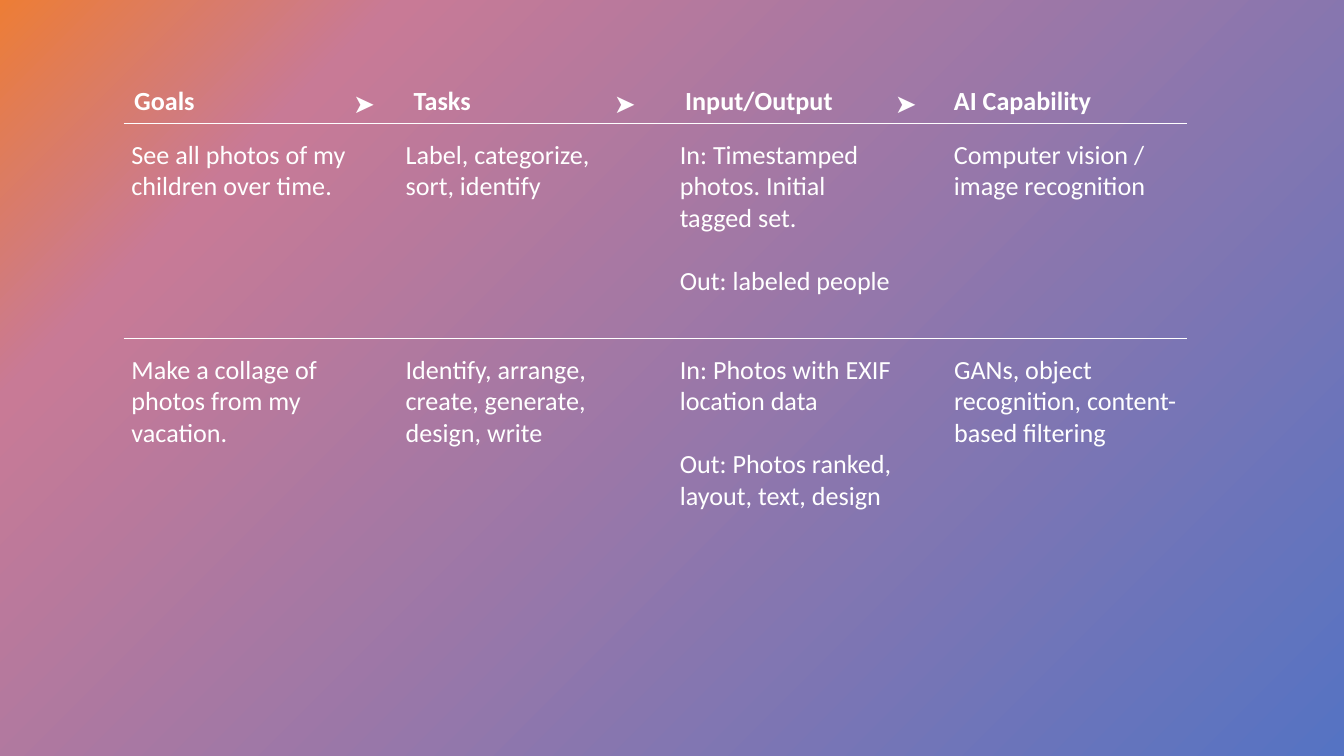
from pptx import Presentation
from pptx.dml.color import RGBColor
from pptx.enum.shapes import MSO_CONNECTOR
from pptx.enum.text import MSO_AUTO_SIZE as AutoSize
from pptx.oxml import parse_xml
from pptx.oxml.ns import nsdecls
from pptx.util import Inches, Pt
from lxml import etree

WHITE = RGBColor(0xFF, 0xFF, 0xFF)
BLUE = RGBColor(0x55, 0x73, 0xC3)
PINK = RGBColor(0xC8, 0x7A, 0x96)
ORANGE = RGBColor(0xED, 0x7D, 0x36)

COLUMN_X = [0.88, 2.92, 4.96, 7]
HEADINGS = [("Goals", 0.9, 0.66), ("Tasks", 2.98, 0.63),
            ("Input/Output", 5, 1.31), ("AI Capability", 7, 1.33)]
ARROW_X = [2.53, 4.47, 6.56]
# Each row: rule height, text top, short cell height, cells as paragraph lists
ROWS = [
    (0.92, 0.98, 0.57, [
        ["See all photos of my children over time."],
        ["Label, categorize, sort, identify"],
        ["In: Timestamped photos. Initial tagged set.", "Out: labeled people"],
        ["Computer vision / image recognition"]]),
    (2.52, 2.58, 0.81, [
        ["Make a collage of photos from my vacation."],
        ["Identify, arrange, create, generate, design, write"],
        ["In: Photos with EXIF location data",
         "Out: Photos ranked, layout, text, design"],
        ["GANs, object recognition, content-based filtering"]]),
]


def write_text(tf, paragraphs, size=14, bold=False, color=WHITE,
               font="Calibri", gap=17):
    """Fill a text frame, with gap points between paragraphs."""
    for i, text in enumerate(paragraphs):
        p = tf.add_paragraph() if i else tf.paragraphs[0]
        if i:
            p.space_before = Pt(gap)
        r = p.add_run()
        r.text = text
        r.font.name = font
        r.font.size = Pt(size)
        r.font.bold = bold
        r.font.color.rgb = color


class SlideBuilder:
    def __init__(self, slide, line_color=WHITE, line_width=0.5):
        self.s = slide
        self.line_color = line_color
        self.line_width = line_width

    def background(self, stops):
        """Radial gradient centred on the bottom right corner."""
        gs = "".join(f'<a:gs pos="{pos * 1000}"><a:srgbClr val="{color}"/></a:gs>'
                     for pos, color in stops)
        bg = parse_xml(
            f'<p:bg {nsdecls("p", "a")}><p:bgPr><a:gradFill><a:gsLst>{gs}</a:gsLst>'
            '<a:path path="circle"><a:fillToRect l="100000" t="100000"/></a:path>'
            '</a:gradFill><a:effectLst/></p:bgPr></p:bg>')
        self.s._element.cSld.insert(0, bg)

    def text(self, paragraphs, x, y, w, h, wrap=True, **style):
        sp = self.s.shapes.add_textbox(Inches(x), Inches(y), Inches(w), Inches(h))
        tf = sp.text_frame
        tf.word_wrap = wrap
        tf.auto_size = AutoSize.SHAPE_TO_FIT_TEXT
        write_text(tf, paragraphs, **style)

    def rule(self, x1, x2, y):
        line = self.s.shapes.add_connector(
            MSO_CONNECTOR.STRAIGHT, Inches(x1), Inches(y), Inches(x2), Inches(y))
        line.line.color.rgb = self.line_color
        line.line.width = Pt(self.line_width)
        etree.SubElement(
            line._element.spPr,
            "{http://schemas.openxmlformats.org/drawingml/2006/main}effectLst")


def main():
    prs = Presentation()
    prs.slide_width = Inches(10)
    prs.slide_height = prs.slide_width * 9 // 16
    b = SlideBuilder(prs.slides.add_slide(prs.slide_layouts[6]))
    b.background([(0, BLUE), (81, PINK), (100, ORANGE)])

    for heading, x, w in HEADINGS:
        b.text([heading], x, 0.58, w, 0.34, wrap=heading == "AI Capability", bold=True)
    for x in ARROW_X:
        b.text(["➤"], x, 0.6, 0.4, 0.34, wrap=False)

    for rule_y, y, short_h, cells in ROWS:
        b.rule(0.92, 8.83, rule_y)
        for x, paragraphs in zip(COLUMN_X, cells):
            w = 1.89 if paragraphs[0].startswith("GANs") else 1.8
            h = 1.28 if len(paragraphs) > 1 else short_h
            b.text(paragraphs, x, y, w, h)

    prs.save("out.pptx")


if __name__ == "__main__":
    main()
